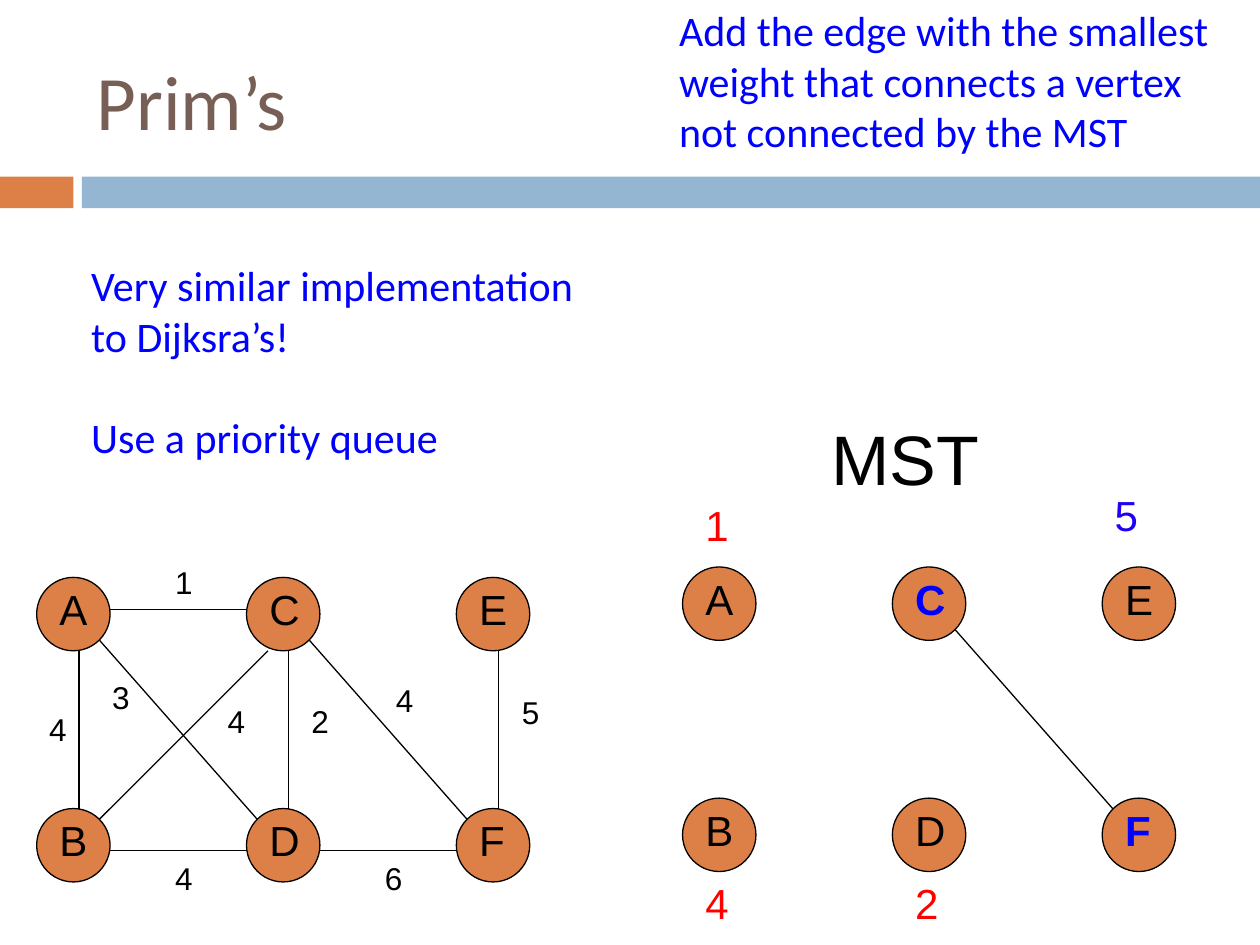
from dataclasses import dataclass

from lxml.etree import SubElement
from pptx import Presentation
from pptx.dml.color import RGBColor as RGB
from pptx.enum.shapes import MSO_CONNECTOR as CONN, MSO_SHAPE as SHAPE
from pptx.enum.text import MSO_ANCHOR as ANCHOR
from pptx.oxml.ns import qn
from pptx.util import Cm, Pt


@dataclass(frozen=True)
class Theme:
    orange: str = "DD8047"
    bar: str = "94B6D2"
    brown: str = "775F55"
    black: str = "000000"
    blue: str = "0000FF"
    violet: str = "1F02F6"
    red: str = "FF0000"
    head: str = "Calibri"
    body: str = "Arial"
    title: int = 44
    heading: int = 40
    note: int = 24
    weight: int = 18
    line: float = 0.75


# Graph geometry in cm
NODE, LABEL, INSET = 1.48, 1.27, 0.21
COL, ROW = 4.23, 4.66
ROWS = ("ACE", "BDF")
FULL_GRAPH = (0.74, 11.64)
TREE = (13.76, 11.43)

# Edges inside one column step, relative to the top left node's box
DOWN = ((0.85, ROW), (0.85, NODE))
TOP = ((NODE, 0.64), (COL, 0.64))
BOTTOM = ((NODE, 5.5), (COL, 5.5))
FALLING = ((1.27, 1.27), (4.44, 4.87))
RISING = ((1.27, 4.87), (4.66, NODE))


class SlideBuilder:
    def __init__(self, s, theme):
        self.s, self.theme = s, theme

    def shape(self, kind, box, fill, outline=None, parent=None):
        sp = (parent or self.s).shapes.add_shape(kind, *map(Cm, box))
        sp.shadow.inherit = False
        sp.fill.solid()
        sp.fill.fore_color.rgb = RGB.from_string(fill)
        if outline:
            sp.line.color.rgb = RGB.from_string(outline)
            sp.line.width = Pt(self.theme.line)
        else:
            sp.line.fill.background()

    def text(self, box, paragraphs, size, color, font=None, bold=False,
             anchor=ANCHOR.TOP, gap=0, parent=None):
        sp = (parent or self.s).shapes.add_textbox(*map(Cm, box))
        tf = sp.text_frame
        tf.word_wrap = True
        tf.vertical_anchor = anchor
        style = {"name": font or self.theme.body, "size": Pt(size), "bold": bold}
        for i, words in enumerate(paragraphs):
            p = tf.add_paragraph() if i else tf.paragraphs[0]
            if i:
                p.space_before = Pt(gap)
            r = p.add_run()
            r.text = words
            for key, value in style.items():
                setattr(r.font, key, value)
            r.font.color.rgb = RGB.from_string(color)

    def node(self, origin, col, row, in_tree=False):
        t = self.theme
        x, y = origin[0] + col * COL, origin[1] + row * ROW
        group = self.s.shapes.add_group_shape()
        self.shape(SHAPE.OVAL, (x, y, NODE, NODE), t.orange, t.black, group)
        self.text((x + INSET, y, LABEL, LABEL), [ROWS[row][col]], t.note,
                  t.blue if in_tree else t.black, bold=in_tree, parent=group)

    def graph(self, origin, edges, in_tree=""):
        """Draw the six nodes and the edges, given as (column, edge) pairs."""
        for row, names in enumerate(ROWS):
            for col, name in enumerate(names):
                self.node(origin, col, row, name in in_tree)
        for col, ends in edges:
            self.edge(origin, col, ends)

    def edge(self, origin, col, ends):
        points = [Cm(v) for x, y in ends
                  for v in (origin[0] + col * COL + x, origin[1] + y)]
        line = self.s.shapes.add_connector(CONN.STRAIGHT, *points)
        line.line.color.rgb = RGB.from_string(self.theme.black)
        line.line.width = Pt(self.theme.line)
        SubElement(line._element.spPr, qn("a:effectLst"))


def main():
    prs = Presentation()
    prs.slide_width, prs.slide_height = Cm(25.4), Cm(19.05)
    t = Theme()
    b = SlideBuilder(prs.slides.add_slide(prs.slide_layouts[6]), t)

    b.shape(SHAPE.RECTANGLE, (0, 3.56, 1.48, 0.64), t.orange)
    b.shape(SHAPE.RECTANGLE, (1.65, 3.56, 23.75, 0.64), t.bar)
    b.text((1.7, 0.64, 22.66, 2.74), ["Prim’s"], t.title, t.brown, t.head,
           anchor=ANCHOR.MIDDLE)

    b.graph(FULL_GRAPH, [(0, BOTTOM), (1, DOWN), (0, DOWN), (0, TOP), (0, FALLING),
                         (1, BOTTOM), (2, DOWN), (1, FALLING), (0, RISING)])
    weights = [("4", 0.74, 14.18), ("1", 3.28, 11.22), ("2", 6.03, 14.02),
               ("3", 2.01, 13.55), ("4", 3.28, 17.2), ("5", 10.27, 13.85),
               ("4", 7.73, 13.6), ("6", 7.51, 17.2), ("4", 4.34, 14.02)]
    for weight, x, y in weights:
        b.text((x, y, 1.48, 1.02), [weight], t.weight, t.black)

    b.text((16.51, 8.26, 5.29, 1.96), ["MST"], t.heading, t.black)
    b.graph(TREE, [(1, FALLING)], in_tree="CF")
    keys = [("1", 0, 9.95, t.red), ("5", 2, 9.74, t.violet),
            ("4", 0, 17.57, t.red), ("2", 1, 17.57, t.red)]
    for key, col, y, color in keys:
        x = TREE[0] + INSET + col * COL - (0.21 if col == 2 else 0)
        b.text((x, y, 1.91, 1.27), [key], t.note, color)

    b.text((1.59, 5.11, 10.62, 4.37),
           ["Very similar implementation to Dijksra’s!", "Use a priority queue"],
           t.note, t.blue, t.head, gap=29.3)
    b.text((13.44, -0.03, 11.43, 3.33),
           ["Add the edge with the smallest weight that connects a vertex "
            "not connected by the MST"], t.note, t.blue, t.head)

    prs.save("out.pptx")


if __name__ == "__main__":
    main()
